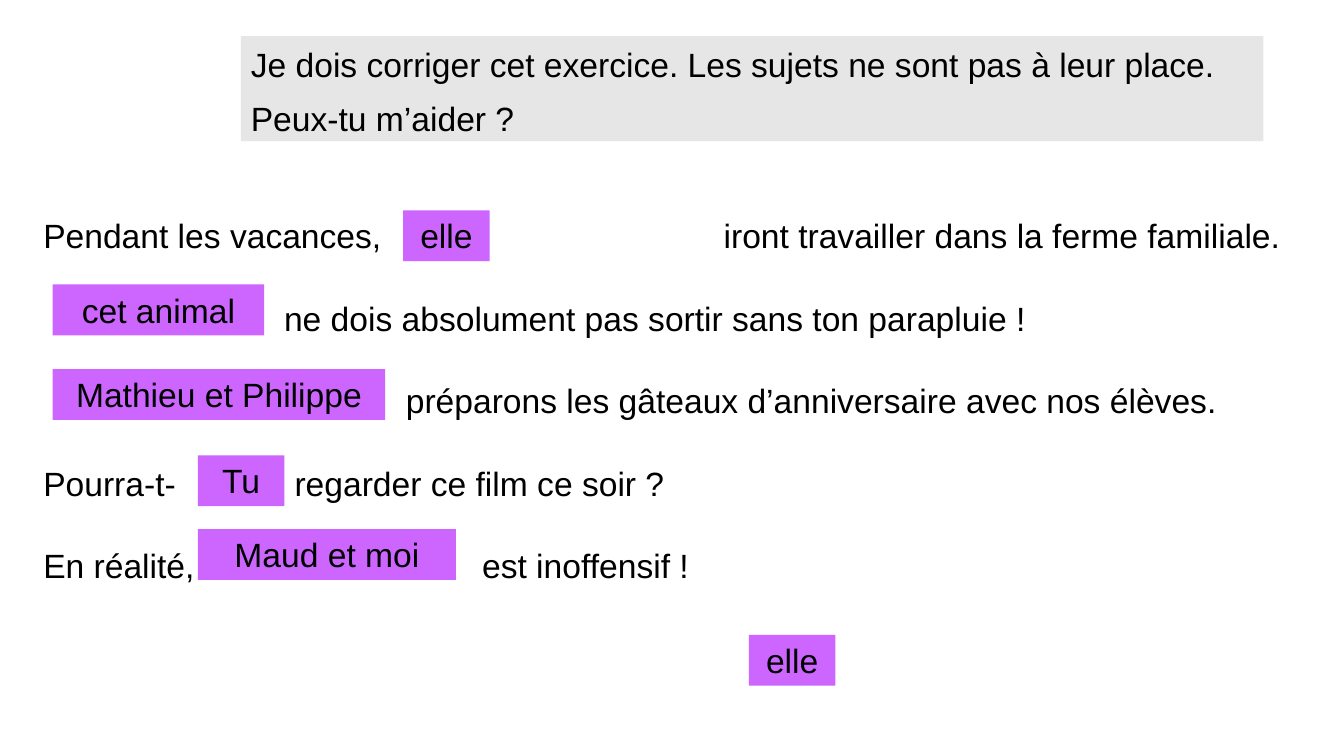
from lxml import etree
from pptx import Presentation
from pptx.dml.color import RGBColor
from pptx.enum import shapes, text
from pptx.oxml.ns import qn
from pptx.util import Pt

COLOURS = {"text": "000000", "instruction": "E7E6E6", "subject": "CC66FF"}


class ExerciseSlide:
    """Holds the text style and the current slide, and draws its elements."""

    def __init__(self, slide, font="Arial", size=24):
        self.slide = slide
        self.font = font
        self.size = size

    def add_run(self, paragraph, words):
        run = paragraph.add_run()
        run.text = words
        run.font.name = self.font
        run.font.size = Pt(self.size)
        run.font.color.rgb = RGBColor.from_string(COLOURS["text"])

    def fill_frame(self, frame, lines, **paragraph_style):
        frame.word_wrap = True
        frame.vertical_anchor = text.MSO_ANCHOR.TOP
        for index, line in enumerate(lines):
            paragraph = frame.add_paragraph() if index else frame.paragraphs[0]
            for name, value in paragraph_style.items():
                setattr(paragraph, name, value)
            self.add_run(paragraph, line)

    def add_panel(self, box, colour, lines, **paragraph_style):
        shape = self.slide.shapes.add_shape(
            shapes.MSO_SHAPE.RECTANGLE, *map(Pt, box))
        shape.shadow.inherit = False
        shape.fill.solid()
        shape.fill.fore_color.rgb = RGBColor.from_string(COLOURS[colour])
        shape.line.fill.background()
        self.fill_frame(shape.text_frame, lines, **paragraph_style)

    def add_sentences(self, box, sentences, gap):
        frame = self.slide.shapes.add_textbox(*map(Pt, box)).text_frame
        frame.margin_right = 0
        lines = [f"{start}\t{end}" for start, end, stop in sentences]
        self.fill_frame(frame, lines, space_after=Pt(gap))
        for paragraph, (start, end, stop) in zip(frame.paragraphs, sentences):
            properties = paragraph._p.get_or_add_pPr()
            tabs = etree.SubElement(properties, qn("a:tabLst"))
            etree.SubElement(tabs, qn("a:tab"), pos=str(Pt(stop)), algn="l")


INSTRUCTION = [
    "Je dois corriger cet exercice. Les sujets ne sont pas à leur place.",
    "Peux-tu m’aider ?",
]
SENTENCES = [
    ("Pendant les vacances,", "iront travailler dans la ferme familiale.", 486),
    ("", "ne dois absolument pas sortir sans ton parapluie !", 172),
    ("", "préparons les gâteaux d’anniversaire avec nos élèves.", 259),
    ("Pourra-t-", "regarder ce film ce soir ?", 179.5),
    ("En réalité,", "est inoffensif !", 313.5),
]
SUBJECTS = [
    ("elle", 288, 150.3, 61.8),
    ("cet animal", 37.6, 203.2, 151.2),
    ("Mathieu et Philippe", 37.6, 263.6, 237.6),
    ("Tu", 141.3, 325.2, 61.8),
    ("Maud et moi", 141.3, 378, 184.4),
    ("elle", 535, 453.5, 61.8),
]
SUBJECT_HEIGHT = 36.3


def main():
    presentation = Presentation()
    presentation.slide_width = Pt(960)
    presentation.slide_height = Pt(540)
    slide = presentation.slides.add_slide(presentation.slide_layouts[6])
    exercise = ExerciseSlide(slide)
    exercise.add_panel((172.1, 25.8, 730.4, 75), "instruction", INSTRUCTION,
                       alignment=text.PP_ALIGN.LEFT, line_spacing=1.07,
                       space_after=Pt(8))
    exercise.add_sentences((23.8, 150.3, 901.4, 290.9), SENTENCES, gap=30.1)
    for subject, left, top, width in SUBJECTS:
        exercise.add_panel((left, top, width, SUBJECT_HEIGHT), "subject",
                           [subject], alignment=text.PP_ALIGN.CENTER)
    presentation.save("out.pptx")


if __name__ == "__main__":
    main()
